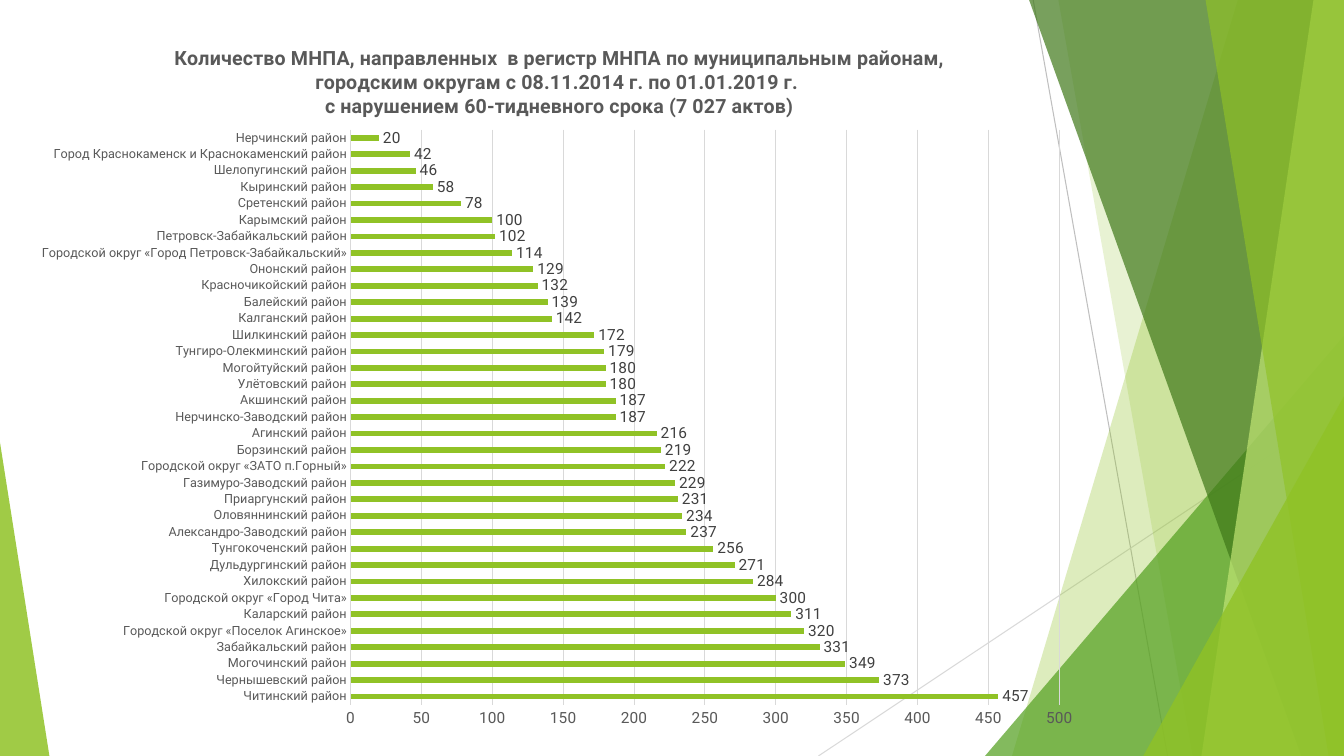
"""Build the slide on municipal legal acts sent to the register late."""
from dataclasses import dataclass

from lxml import etree
from pptx import Presentation
from pptx.chart.chart import Chart
from pptx.chart.data import CategoryChartData
from pptx.dml.color import RGBColor
from pptx.enum.chart import XL_CHART_TYPE, XL_LABEL_POSITION, XL_TICK_MARK
from pptx.enum.shapes import MSO_CONNECTOR, MSO_SHAPE
from pptx.oxml import parse_xml
from pptx.oxml.ns import nsdecls, qn
from pptx.shapes.base import BaseShape
from pptx.slide import Slide
from pptx.text.text import Font
from pptx.util import Pt

BAR = XL_CHART_TYPE.BAR_CLUSTERED
OUTSIDE_END = XL_LABEL_POSITION.OUTSIDE_END
NO_TICK = XL_TICK_MARK.NONE
STRAIGHT = MSO_CONNECTOR.STRAIGHT
TRIANGLE = MSO_SHAPE.ISOSCELES_TRIANGLE
W, H = 960, 540


@dataclass(frozen=True)
class Theme:
    font: str = "Roboto"
    green: str = "90C226"
    leaf: str = "54A021"
    dark: str = "3F7819"
    lime: str = "C0E474"
    text: str = "595959"
    label: str = "404040"
    grid: str = "D9D9D9"
    ray: str = "BFBFBF"
    title_size: float = 14
    value_size: float = 11
    category_size: float = 9
    hairline: float = 0.75


@dataclass(frozen=True)
class Ray:
    x1: float
    y1: float
    x2: float
    y2: float
    color: str


@dataclass(frozen=True)
class Band:
    """A band from the top edge to the bottom, closed by the right edge."""
    top_x: float
    bottom_x: float
    color: str
    opacity: int


@dataclass(frozen=True)
class Corner:
    """A right triangle standing on the bottom edge."""
    x: float
    y: float
    width: float
    apex: float
    color: str
    opacity: int


THEME = Theme()
RAYS = [
    Ray(738, 0, 834, H, THEME.ray),
    Ray(W, 290, 584.6, H, THEME.grid),
]
FACETS = [
    Band(884.2, 722.9, THEME.green, 30),
    Band(756, 851.8, THEME.green, 20),
    Corner(703.6, 239.8, 256.4, 1, THEME.leaf, 72),
    Band(735.1, 929.5, THEME.dark, 70),
    Band(938.2, 858.2, THEME.lime, 70),
    Band(861.1, 949, THEME.green, 65),
    Corner(816.6, 283, 143.4, 1, THEME.green, 80),
    Corner(0, 316.1, 35.3, 0, THEME.green, 85),
]
TITLE = [
    "Количество МНПА, направленных  в регистр МНПА по муниципальным районам, "
    "городским округам с 08.11.2014 г. по 01.01.2019 г. ",
    "с нарушением 60-тидневного срока (7 027 актов)",
]
ACTS = {
    "Читинский район": 457,
    "Чернышевский район": 373,
    "Могочинский район": 349,
    "Забайкальский район": 331,
    "Городской округ «Поселок Агинское»": 320,
    "Каларский район": 311,
    "Городской округ «Город Чита»": 300,
    "Хилокский район": 284,
    "Дульдургинский район": 271,
    "Тунгокоченский район": 256,
    "Александро-Заводский район": 237,
    "Оловяннинский район": 234,
    "Приаргунский район": 231,
    "Газимуро-Заводский район": 229,
    "Городской округ «ЗАТО п.Горный»": 222,
    "Борзинский район": 219,
    "Агинский район": 216,
    "Нерчинско-Заводский район": 187,
    "Акшинский район": 187,
    "Улётовский район": 180,
    "Могойтуйский район": 180,
    "Тунгиро-Олекминский район": 179,
    "Шилкинский район": 172,
    "Калганский район": 142,
    "Балейский район": 139,
    "Красночикойский район": 132,
    "Ононский район": 129,
    "Городской округ «Город Петровск-Забайкальский»": 114,
    "Петровск-Забайкальский район": 102,
    "Карымский район": 100,
    "Сретенский район": 78,
    "Кыринский район": 58,
    "Шелопугинский район": 46,
    "Город Краснокаменск и Краснокаменский район": 42,
    "Нерчинский район": 20,
}


def rgb(color: str) -> RGBColor:
    return RGBColor.from_string(color)


def set_font(font: Font, size: float, color: str, bold: bool = False) -> None:
    font.name, font.size, font.bold = THEME.font, Pt(size), bold
    font.color.rgb = rgb(color)


def draw_ray(s: Slide, ray: Ray) -> None:
    line = s.shapes.add_connector(STRAIGHT, Pt(ray.x1), Pt(ray.y1), Pt(ray.x2), Pt(ray.y2))
    line.line.color.rgb = rgb(ray.color)
    line.line.width = Pt(THEME.hairline)
    etree.SubElement(line.element.spPr, qn("a:effectLst"))


def paint(sp: BaseShape, color: str, opacity: int) -> None:
    sp.shadow.inherit = False
    sp.fill.solid()
    sp.fill.fore_color.rgb = rgb(color)
    sp.line.fill.background()
    clr = sp.element.spPr.find(qn("a:solidFill")).find(qn("a:srgbClr"))
    etree.SubElement(clr, qn("a:alpha")).set("val", str(opacity * 1000))


def draw_facet(s: Slide, facet: Band | Corner) -> None:
    if isinstance(facet, Band):
        builder = s.shapes.build_freeform(Pt(facet.top_x), 0)
        corners = [(W, 0), (W, H), (facet.bottom_x, H)]
        builder.add_line_segments([(Pt(x), Pt(y)) for x, y in corners], close=True)
        sp = builder.convert_to_shape()
    else:
        sp = s.shapes.add_shape(TRIANGLE, Pt(facet.x), Pt(facet.y), Pt(facet.width), Pt(H - facet.y))
        sp.adjustments[0] = facet.apex
    paint(sp, facet.color, facet.opacity)


def place(parent: etree.ElementBase, index: int, inner: bool, **box: float) -> None:
    for old in parent.findall(qn("c:layout")):
        parent.remove(old)
    target = '<c:layoutTarget val="inner"/>' if inner else ""
    modes = "".join(f'<c:{k}Mode val="edge"/>' for k in "xy")
    sizes = "".join(f'<c:{k} val="{v}"/>' for k, v in box.items())
    parent.insert(index, parse_xml(
        f'<c:layout {nsdecls("c")}><c:manualLayout>{target}{modes}{sizes}</c:manualLayout></c:layout>'))


def style_title(chart: Chart) -> None:
    chart.has_title = True
    tf = chart.chart_title.text_frame
    tf.text = "\n".join(TITLE)
    for p in tf.paragraphs:
        for r in p.runs:
            set_font(r.font, THEME.title_size, THEME.text, True)
    chart.chart_title.include_in_layout = False
    place(chart.chart_title.element, 1, False, x=0.14, y=0.04)


def style_axes(chart: Chart) -> None:
    cat, val = chart.category_axis, chart.value_axis
    for axis, size in ((cat, THEME.category_size), (val, THEME.value_size)):
        axis.major_tick_mark = axis.minor_tick_mark = NO_TICK
        set_font(axis.tick_labels.font, size, THEME.text)
    val.minimum_scale, val.maximum_scale, val.major_unit = 0, 500, 50
    val.has_major_gridlines = True
    val.format.line.fill.background()
    for line in (cat.format.line, val.major_gridlines.format.line):
        line.color.rgb = rgb(THEME.grid)
        line.width = Pt(THEME.hairline)


def draw_chart(s: Slide) -> None:
    data = CategoryChartData()
    data.categories = list(ACTS)
    data.add_series("Количество МНПА", list(ACTS.values()))
    chart = s.shapes.add_chart(BAR, Pt(15), Pt(8.6), Pt(767), Pt(522), data).chart
    chart.has_legend = False
    set_font(chart.font, 10, THEME.text)
    style_title(chart)
    style_axes(chart)
    plot = chart.plots[0]
    plot.gap_width, plot.vary_by_categories, plot.has_data_labels = 182, False, True
    plot.series[0].format.fill.solid()
    plot.series[0].format.fill.fore_color.rgb = rgb(THEME.green)
    labels = plot.data_labels
    labels.show_value, labels.position = True, OUTSIDE_END
    set_font(labels.font, THEME.value_size, THEME.label)
    area = chart.element.find(qn("c:chart")).find(qn("c:plotArea"))
    place(area, 0, True, x=0.307, y=0.161, w=0.66, h=0.787)


def main() -> None:
    prs = Presentation()
    prs.slide_width, prs.slide_height = Pt(W), Pt(H)
    s = prs.slides.add_slide(prs.slide_layouts[6])
    for ray in RAYS:
        draw_ray(s, ray)
    for facet in FACETS:
        draw_facet(s, facet)
    draw_chart(s)
    prs.save("out.pptx")


if __name__ == "__main__":
    main()
